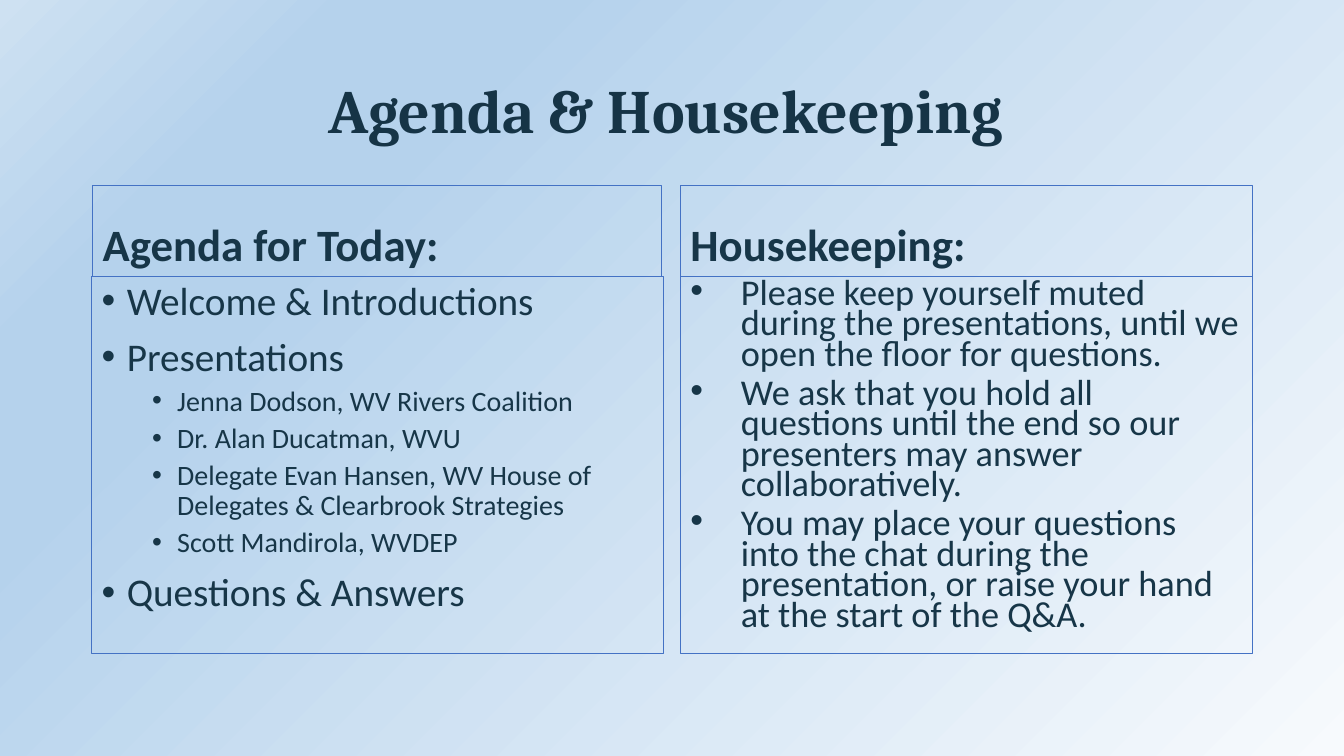
from lxml import etree
from pptx import Presentation
from pptx import util as u
from pptx.dml.color import RGBColor
from pptx.enum import text as t
from pptx.oxml.ns import qn

TITLE_INK = RGBColor(0x16, 0x34, 0x46)
BODY_INK = RGBColor(0x17, 0x36, 0x48)
FRAME = RGBColor(0x44, 0x72, 0xC4)
SKY_STOPS = [(0, "F7FAFD"), (74, "B5D2EC"), (83, "B5D2EC"), (100, "CEE1F2")]

AGENDA = [
    (0, "Welcome & Introductions"),
    (0, "Presentations "),
    (1, "Jenna Dodson, WV Rivers Coalition"),
    (1, "Dr. Alan Ducatman, WVU"),
    (1, "Delegate Evan Hansen, WV House of Delegates & Clearbrook Strategies"),
    (1, "Scott Mandirola, WVDEP"),
    (0, "Questions & Answers "),
]
HOUSEKEEPING = [
    "Please keep yourself muted during the presentations, until we open the floor for questions. ",
    "We ask that you hold all questions until the end so our presenters may answer collaboratively. ",
    "You may place your questions into the chat during the presentation, "
    "or raise your hand at the start of the Q&A. ",
]


def paint_background(slide):
    """Fill the slide with the diagonal blue gradient."""
    fill = slide.background.fill
    fill.gradient()
    fill.gradient_angle = 135
    stops = slide.element.find(".//" + qn("a:gsLst"))
    for stop in list(stops):
        stops.remove(stop)
    for percent, color in SKY_STOPS:
        stop = etree.SubElement(stops, qn("a:gs"), pos=str(percent * 1000))
        etree.SubElement(stop, qn("a:srgbClr"), val=color)


def add_frame(slide, box, anchor, outlined=True):
    """Add a wrapping text frame in the box and return it."""
    area = slide.shapes.add_textbox(*(u.Inches(length) for length in box))
    if outlined:
        area.line.color.rgb = FRAME
        area.line.width = u.Pt(0.75)
    frame = area.text_frame
    frame.word_wrap = True
    frame.vertical_anchor = anchor
    return frame


def style(paragraph, size, color=BODY_INK, font="Calibri", bold=False, spacing=0.9):
    """Set the font and line spacing of a paragraph."""
    paragraph.line_spacing = spacing
    paragraph.font.size = u.Pt(size)
    paragraph.font.name = font
    paragraph.font.bold = bold
    paragraph.font.color.rgb = color


def add_bullet(frame, index, words, indent, hang, before):
    """Add a bulleted paragraph with a hanging indent."""
    paragraph = frame.add_paragraph() if index else frame.paragraphs[0]
    paragraph.text = words
    properties = paragraph._p.get_or_add_pPr()
    properties.set("marL", str(u.Inches(indent)))
    properties.set("indent", str(-u.Inches(hang)))
    etree.SubElement(properties, qn("a:buFont"), typeface="Arial")
    etree.SubElement(properties, qn("a:buChar"), char="•")
    paragraph.space_before = u.Pt(before if index else 0)
    return paragraph


def add_title(slide, box):
    """Place the centred slide title."""
    title = add_frame(slide, box, t.MSO_ANCHOR.MIDDLE, outlined=False).paragraphs[0]
    title.text = "Agenda & Housekeeping "
    title.alignment = t.PP_ALIGN.CENTER
    style(title, 44, TITLE_INK, "Cambria", bold=True)


def add_heading(slide, box, words):
    """Place a column heading at the foot of its box."""
    heading = add_frame(slide, box, t.MSO_ANCHOR.BOTTOM).paragraphs[0]
    heading.text = words
    style(heading, 32, bold=True)


def add_agenda(slide, box):
    """Place the two-level agenda list."""
    frame = add_frame(slide, box, t.MSO_ANCHOR.TOP)
    for index, (level, words) in enumerate(AGENDA):
        item = add_bullet(frame, index, words, 0.25 + level * 0.5, 0.25, 5 if level else 10)
        item.level = level
        style(item, 20 if level else 28)


def add_housekeeping(slide, box):
    """Place the tightly set housekeeping rules."""
    frame = add_frame(slide, box, t.MSO_ANCHOR.TOP)
    for index, words in enumerate(HOUSEKEEPING):
        rule = add_bullet(frame, index, words, 0.5, 0.5, 3)
        rule.space_after = u.Pt(3)
        style(rule, 25.9, spacing=0.7)


def main():
    """Build the slide and save it."""
    deck = Presentation()
    deck.slide_width, deck.slide_height = u.Inches(13.33), u.Inches(7.5)
    slide = deck.slides.add_slide(deck.slide_layouts[6])
    paint_background(slide)
    add_title(slide, (0.92, 0.4, 11.5, 1.45))
    add_heading(slide, (0.92, 1.84, 5.64, 0.9), "Agenda for Today: ")
    add_heading(slide, (6.75, 1.84, 5.67, 0.9), "Housekeeping: ")
    add_housekeeping(slide, (6.75, 2.74, 5.67, 3.74))
    add_agenda(slide, (0.91, 2.74, 5.67, 3.74))
    deck.save("out.pptx")


if __name__ == "__main__":
    main()
